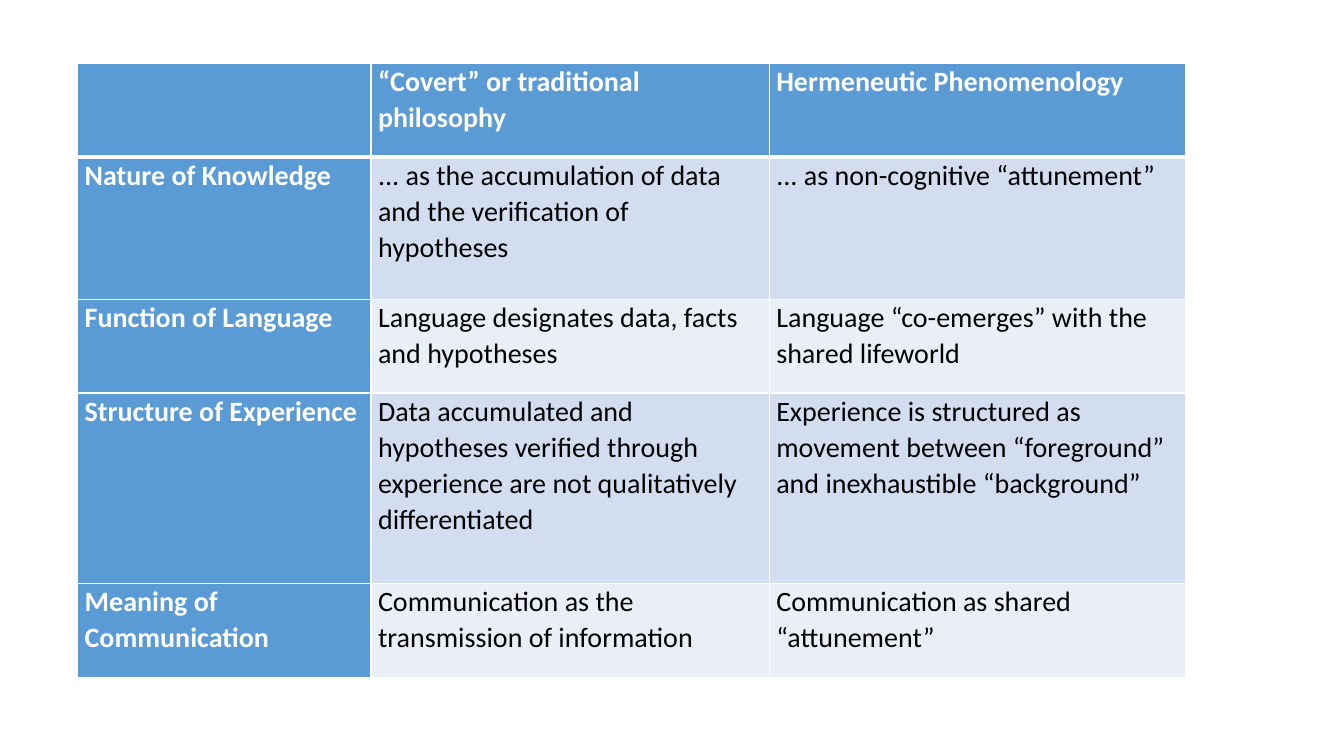
from dataclasses import dataclass

from lxml.etree import SubElement
from pptx import Presentation
from pptx.dml.color import RGBColor
from pptx.oxml.ns import qn
from pptx.table import Table, _Cell
from pptx.util import Emu, Pt

EMU_PER_PX = 9144  # 100 px to the inch


def px(length: int) -> Emu:
    return Emu(length * EMU_PER_PX)


@dataclass(frozen=True)
class Theme:
    font: str = "Calibri"
    text_size: int = 20
    line_spacing: float = 1.05
    heading_fill: str = "5B9BD5"
    heading_text: str = "FFFFFF"
    body_text: str = "000000"
    bands: tuple[str, str] = ("D2DEEF", "EAEFF7")
    border: str = "FFFFFF"
    thin_border: int = 1
    header_border: int = 3


@dataclass(frozen=True)
class Row:
    height: int
    heading: str
    traditional: str
    hermeneutic: str

    def texts(self) -> tuple[str, str, str]:
        return self.heading, self.traditional, self.hermeneutic


THEME = Theme()
PAGE_WIDTH, PAGE_HEIGHT = 1333, 750
TABLE_LEFT, TABLE_TOP = 77, 63
COLUMN_WIDTHS = (291, 395, 413)
CELL_MARGIN = 7

ROWS = (
    Row(93, "", "“Covert” or traditional philosophy", "Hermeneutic Phenomenology"),
    Row(141, "Nature of Knowledge",
        "... as the accumulation of data and the verification of hypotheses",
        "... as non-cognitive “attunement”"),
    Row(93, "Function of Language",
        "Language designates data, facts and hypotheses",
        "Language “co-emerges” with the shared lifeworld"),
    Row(189, "Structure of Experience",
        "Data accumulated and hypotheses verified through experience "
        "are not qualitatively differentiated",
        "Experience is structured as movement between “foreground” "
        "and inexhaustible “background”"),
    Row(93, "Meaning of Communication",
        "Communication as the transmission of information",
        "Communication as shared “attunement”"),
)


def set_borders(cell: _Cell, row_index: int) -> None:
    """Draw thin lines, with a heavier one between header and body."""
    heavy_side = {0: "lnB", 1: "lnT"}.get(row_index)
    properties = cell._tc.get_or_add_tcPr()
    for side in ("lnL", "lnR", "lnT", "lnB"):
        width = THEME.header_border if side == heavy_side else THEME.thin_border
        line = SubElement(properties, qn(f"a:{side}"), w=str(Pt(width)))
        fill = SubElement(line, qn("a:solidFill"))
        SubElement(fill, qn("a:srgbClr"), val=THEME.border)


def format_cell(cell: _Cell, text: str, row_index: int, column_index: int) -> None:
    is_heading = row_index == 0 or column_index == 0
    cell.margin_left = cell.margin_right = px(CELL_MARGIN)
    cell.margin_top = cell.margin_bottom = 0

    # Borders come before the fill in the cell properties
    set_borders(cell, row_index)
    band = THEME.bands[(row_index - 1) % len(THEME.bands)]
    cell.fill.solid()
    cell.fill.fore_color.rgb = RGBColor.from_string(
        THEME.heading_fill if is_heading else band)

    # Text
    cell.text_frame.text = text
    para = cell.text_frame.paragraphs[0]
    para.line_spacing = THEME.line_spacing
    for span in para.runs:
        span.font.name = THEME.font
        span.font.size = Pt(THEME.text_size)
        span.font.bold = is_heading
        span.font.color.rgb = RGBColor.from_string(
            THEME.heading_text if is_heading else THEME.body_text)


def fill_table(table: Table) -> None:
    for column, width in zip(table.columns, COLUMN_WIDTHS):
        column.width = px(width)
    for row_index, row in enumerate(ROWS):
        table.rows[row_index].height = px(row.height)
        for column_index, text in enumerate(row.texts()):
            format_cell(table.cell(row_index, column_index), text,
                        row_index, column_index)


def main() -> None:
    deck = Presentation()
    deck.slide_width, deck.slide_height = px(PAGE_WIDTH), px(PAGE_HEIGHT)
    blank_layout = deck.slide_layouts[6]
    page = deck.slides.add_slide(blank_layout)

    # Comparison table
    frame = page.shapes.add_table(
        len(ROWS), len(COLUMN_WIDTHS), px(TABLE_LEFT), px(TABLE_TOP),
        px(sum(COLUMN_WIDTHS)), px(sum(row.height for row in ROWS)))
    frame.table.first_col = True
    fill_table(frame.table)

    deck.save("out.pptx")


if __name__ == "__main__":
    main()
